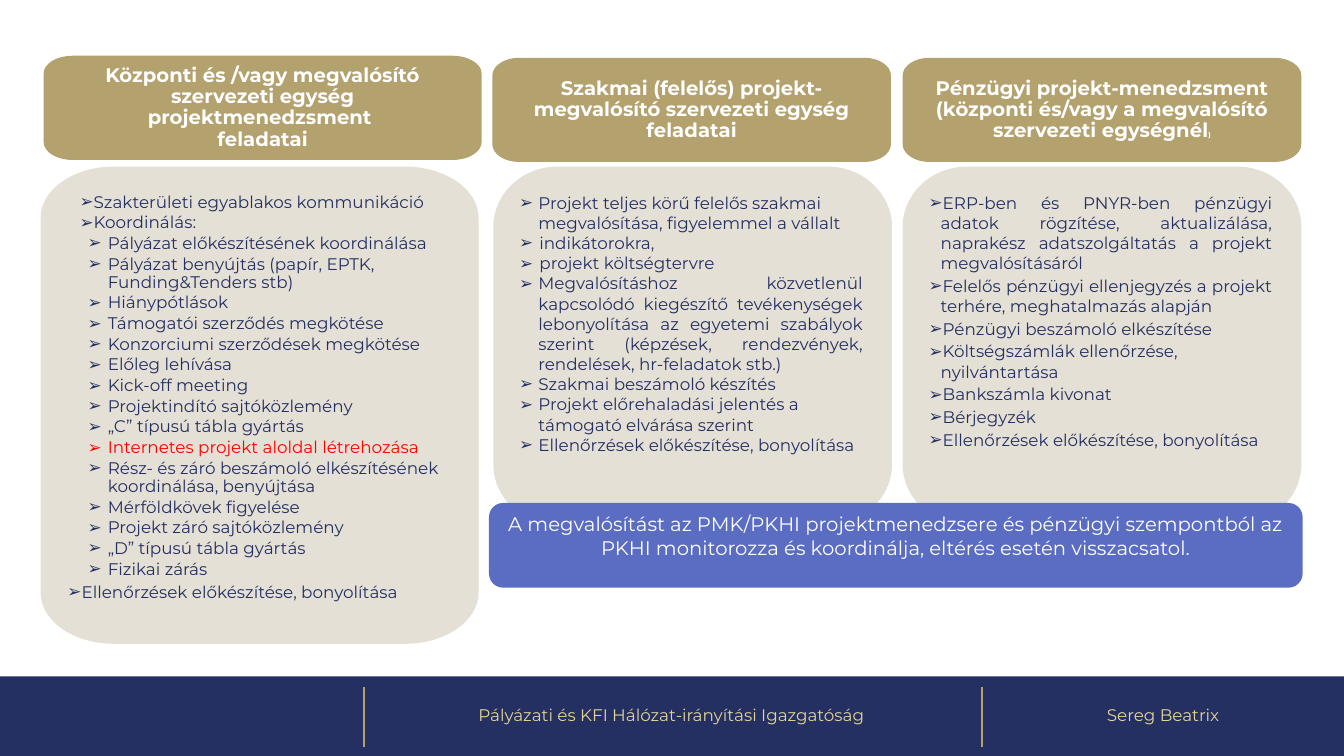
from dataclasses import dataclass

from lxml import etree
from pptx import Presentation
from pptx import util as u
from pptx.dml.color import RGBColor
from pptx.enum import shapes, text
from pptx.oxml.ns import qn

COLUMNS, ROWS = 1333, 750
CELL = u.Inches(0.01)
FONT = "Montserrat"
CURVE = 0.55  # handle length of a quarter ellipse, as a share of its radius
COLOURS = {
    "navy": "242F62", "gold": "B3A16E", "sand": "E5E0D5", "blue": "5A6DC2",
    "white": "FFFFFF", "cream": "E3D496", "red": "FF0000",
}
LEFT, CENTER, JUSTIFY = text.PP_ALIGN.LEFT, text.PP_ALIGN.CENTER, text.PP_ALIGN.JUSTIFY
TOP, MIDDLE = text.MSO_ANCHOR.TOP, text.MSO_ANCHOR.MIDDLE


@dataclass(frozen=True)
class Area:
    column: int
    row: int
    columns: int
    rows: int

    def lengths(self) -> list[int]:
        return [CELL * n for n in (self.column, self.row, self.columns, self.rows)]


@dataclass(frozen=True)
class Run:
    words: str
    size: int = 12
    colour: str = "navy"
    bold: bool = False


@dataclass(frozen=True)
class Style:
    align: text.PP_ALIGN = LEFT
    spacing: float = 1.0
    after: float = 0
    level: int = 0
    margin: int = 0
    hanging: int = 0
    bullet: str = ""


@dataclass(frozen=True)
class Line:
    runs: tuple[Run, ...]
    style: Style


@dataclass(frozen=True)
class Panel:
    area: Area
    corner: tuple[int, int]
    insets: tuple[int, int, int, int]
    colour: str
    anchor: text.MSO_ANCHOR
    lines: list[Line]


def bullet(margin: int, hanging: int, align=LEFT, spacing=1.0, after=1.8, level=1) -> Style:
    return Style(align, spacing, after, level, margin, hanging, "➢")


TITLE = Style(CENTER, 0.9)
CENTRED = Style(CENTER)
LEAD = bullet(12, 0, spacing=0.9)
SUB = bullet(40, 20, spacing=0.9)
FINANCE = bullet(12, 12)
FINANCE_JUSTIFIED = bullet(12, 12, JUSTIFY)
TASK = bullet(19, 19, after=0, level=0)
TASK_WIDE = bullet(20, 20, after=0, level=0)
TASK_JUSTIFIED = bullet(19, 19, JUSTIFY, after=0, level=0)


def lines(style: Style, *sentences: str, colour: str = "navy") -> list[Line]:
    return [Line((Run(sentence, colour=colour),), style) for sentence in sentences]


def title(words: str, *more: Run) -> Line:
    return Line((Run(words, 14, "white", True), *more), TITLE)


CENTRAL_TASKS = [
    *lines(LEAD, "Szakterületi egyablakos kommunikáció", "Koordinálás:"),
    *lines(SUB, "Pályázat előkészítésének koordinálása",
           "Pályázat benyújtás (papír, EPTK, Funding&Tenders stb)",
           "Hiánypótlások", "Támogatói szerződés megkötése",
           "Konzorciumi szerződések megkötése", "Előleg lehívása", "Kick-off meeting",
           "Projektindító sajtóközlemény", "„C” típusú tábla gyártás"),
    *lines(SUB, "Internetes projekt aloldal létrehozása", colour="red"),
    *lines(SUB, "Rész- és záró beszámoló elkészítésének koordinálása, benyújtása",
           "Mérföldkövek figyelése", "Projekt záró sajtóközlemény",
           "„D” típusú tábla gyártás", "Fizikai zárás"),
    *lines(FINANCE_JUSTIFIED, "Ellenőrzések előkészítése, bonyolítása"),
]
PROFESSIONAL_TASKS = [
    *lines(TASK, "Projekt teljes körű felelős szakmai megvalósítása, figyelemmel a vállalt"),
    *lines(TASK_WIDE, "indikátorokra,", "projekt költségtervre"),
    *lines(TASK_JUSTIFIED, "Megvalósításhoz közvetlenül kapcsolódó kiegészítő tevékenységek "
           "lebonyolítása az egyetemi szabályok szerint (képzések, rendezvények, "
           "rendelések, hr-feladatok stb.)"),
    *lines(TASK, "Szakmai beszámoló készítés",
           "Projekt előrehaladási jelentés a támogató elvárása szerint",
           "Ellenőrzések előkészítése, bonyolítása"),
]
FINANCIAL_TASKS = [
    *lines(FINANCE_JUSTIFIED, "ERP-ben és PNYR-ben pénzügyi adatok rögzítése, aktualizálása, "
           "naprakész adatszolgáltatás a projekt megvalósításáról",
           "Felelős pénzügyi ellenjegyzés a projekt terhére, meghatalmazás alapján",
           "Pénzügyi beszámoló elkészítése"),
    *lines(FINANCE, "Költségszámlák ellenőrzése, nyilvántartása"),
    *lines(FINANCE_JUSTIFIED, "Bankszámla kivonat", "Bérjegyzék",
           "Ellenőrzések előkészítése, bonyolítása"),
]


def heading(area: Area, corner: tuple[int, int], *titles: Line) -> Panel:
    return Panel(area, corner, (19, 14, 19, 14), "gold", MIDDLE, list(titles))


def task_list(area: Area, corner: tuple[int, int], inset: int, tasks: list[Line]) -> Panel:
    return Panel(area, corner, (inset, inset, inset + 3, inset + 4), "sand", TOP, tasks)


PANELS = [
    task_list(Area(490, 166, 394, 354), (63, 59), 25, PROFESSIONAL_TASKS),
    heading(Area(44, 56, 433, 102), (28, 17),
            title("Központi és /vagy megvalósító szervezeti egység projektmenedzsment "),
            title("feladatai")),
    task_list(Area(41, 166, 433, 472), (72, 50), 26, CENTRAL_TASKS),
    heading(Area(489, 58, 394, 102), (26, 17),
            title("Szakmai (felelős) projekt-megvalósító szervezeti egység feladatai")),
    heading(Area(896, 58, 394, 102), (26, 17),
            title("Pénzügyi projekt-menedzsment (központi és/vagy a megvalósító "
                  "szervezeti egységnél", Run(")", 5, "white", True))),
    task_list(Area(896, 166, 394, 354), (63, 59), 25, FINANCIAL_TASKS),
]
FOOTER_ROW, FOOTER_ROWS = 671, 79
FOOTER_TEXTS = [
    (Area(359, FOOTER_ROW, 614, FOOTER_ROWS), "Pályázati és KFI Hálózat-irányítási Igazgatóság"),
    (Area(974, FOOTER_ROW, 359, FOOTER_ROWS), "Sereg Beatrix"),
]


def colour(name: str) -> RGBColor:
    return RGBColor.from_string(COLOURS[name])


def write(shape, content: list[Line], anchor, insets=(10, 5, 10, 5)) -> None:
    frame = shape.text_frame
    frame.word_wrap = True
    frame.vertical_anchor = anchor
    (frame.margin_left, frame.margin_top,
     frame.margin_right, frame.margin_bottom) = [CELL * inset for inset in insets]
    for index, line in enumerate(content):
        paragraph = frame.add_paragraph() if index else frame.paragraphs[0]
        style = line.style
        if style.bullet:
            properties = paragraph._p.get_or_add_pPr()
            properties.set("marL", str(CELL * style.margin))
            properties.set("indent", str(-CELL * style.hanging))
            etree.SubElement(properties, qn("a:buFont")).set("typeface", FONT)
            etree.SubElement(properties, qn("a:buChar")).set("char", style.bullet)
        paragraph.alignment = style.align
        paragraph.level = style.level
        paragraph.line_spacing = style.spacing
        paragraph.space_after = u.Pt(style.after)
        for item in line.runs:
            run = paragraph.add_run()
            run.text = item.words
            run.font.name = FONT
            run.font.size = u.Pt(item.size)
            run.font.bold = item.bold
            run.font.color.rgb = colour(item.colour)


def paint(shape, name: str, outlined: bool = False) -> None:
    shape.shadow.inherit = False
    shape.fill.solid()
    shape.fill.fore_color.rgb = colour(name)
    if outlined:
        shape.line.color.rgb = colour(name)
        shape.line.width = u.Pt(1)
    else:
        shape.line.fill.background()


def bend(segment, start: tuple[int, int], corner: tuple[int, int], end: tuple[int, int]) -> None:
    """Turn a straight segment into a quarter ellipse inside the given corner."""
    segment.tag = qn("a:cubicBezTo")
    segment.clear()
    handles = [tuple(round(a + CURVE * (b - a)) for a, b in zip(point, corner))
               for point in (start, end)]
    for x, y in (*handles, end):
        point = etree.SubElement(segment, qn("a:pt"))
        point.set("x", str(x))
        point.set("y", str(y))


def add_rounded(slide, area: Area, corner: tuple[int, int]):
    left, top, width, height = area.lengths()
    rx, ry = (CELL * radius for radius in corner)
    turns = [  # start, corner and end of each turn, clockwise from the top left
        ((0, ry), (0, 0), (rx, 0)),
        ((width - rx, 0), (width, 0), (width, ry)),
        ((width, height - ry), (width, height), (width - rx, height)),
        ((rx, height), (0, height), (0, height - ry)),
    ]
    points = [point for start, _, end in turns for point in (start, end)]
    builder = slide.shapes.build_freeform(*points[0], scale=1.0)
    builder.add_line_segments(points[1:], close=True)
    shape = builder.convert_to_shape(left, top)
    segments = list(shape.element.spPr.iter(qn("a:lnTo")))
    for segment, turn in zip(segments[::2], turns):
        curve = etree.Element(qn("a:cubicBezTo"))
        segment.getparent().replace(segment, curve)
        bend(curve, *turn)
    return shape


def draw_panel(slide, panel: Panel) -> None:
    shape = add_rounded(slide, panel.area, panel.corner)
    paint(shape, panel.colour, outlined=True)
    write(shape, panel.lines, panel.anchor, panel.insets)


def draw_footer(slide) -> None:
    band = slide.shapes.add_shape(shapes.MSO_SHAPE.RECTANGLE,
                                  *Area(0, FOOTER_ROW, COLUMNS, FOOTER_ROWS).lengths())
    paint(band, "navy")
    for column in (361, 974):
        divider = slide.shapes.add_connector(
            shapes.MSO_CONNECTOR.STRAIGHT, CELL * column, CELL * 682, CELL * column, CELL * 741)
        divider.line.color.rgb = colour("gold")
        divider.line.width = u.Pt(1.5)
        etree.SubElement(divider.element.spPr, qn("a:effectLst"))
    for area, words in FOOTER_TEXTS:
        box = slide.shapes.add_textbox(*area.lengths())
        write(box, [Line((Run(words, 12, "cream"),), TITLE)], MIDDLE)


def draw_banner(slide) -> None:
    banner = slide.shapes.add_shape(shapes.MSO_SHAPE.ROUNDED_RECTANGLE,
                                    *Area(485, 499, 807, 84).lengths())
    paint(banner, "blue")
    words = ("A megvalósítást az PMK/PKHI projektmenedzsere és pénzügyi szempontból az "
             "PKHI monitorozza és koordinálja, eltérés esetén visszacsatol.")
    write(banner, [Line((Run(words, 14, "white"),), CENTRED)], TOP)


def main() -> None:
    presentation = Presentation()
    presentation.slide_width, presentation.slide_height = CELL * COLUMNS, CELL * ROWS
    slide = presentation.slides.add_slide(presentation.slide_layouts[6])
    draw_footer(slide)
    for panel in PANELS:
        draw_panel(slide, panel)
    draw_banner(slide)
    presentation.save("out.pptx")


if __name__ == "__main__":
    main()
